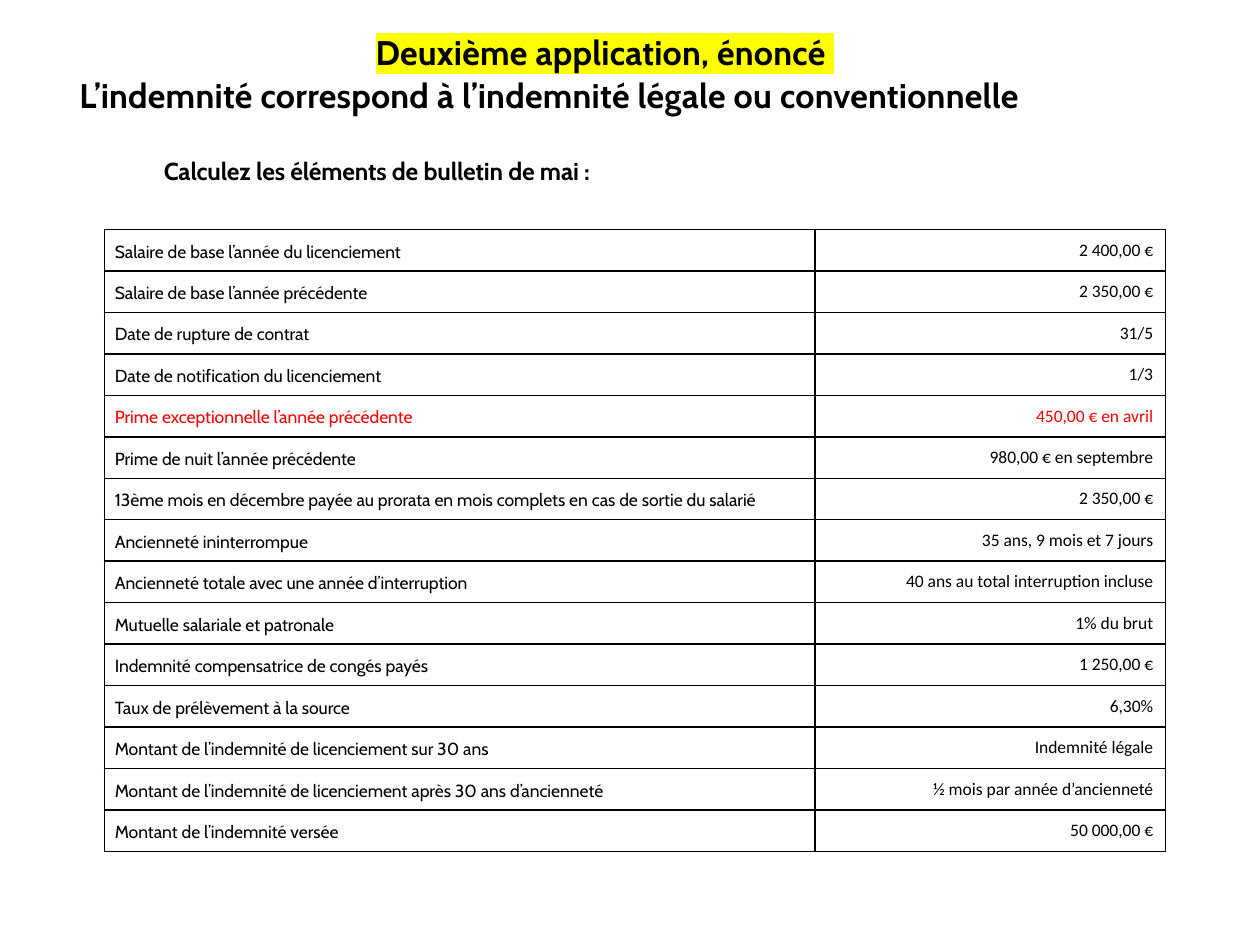
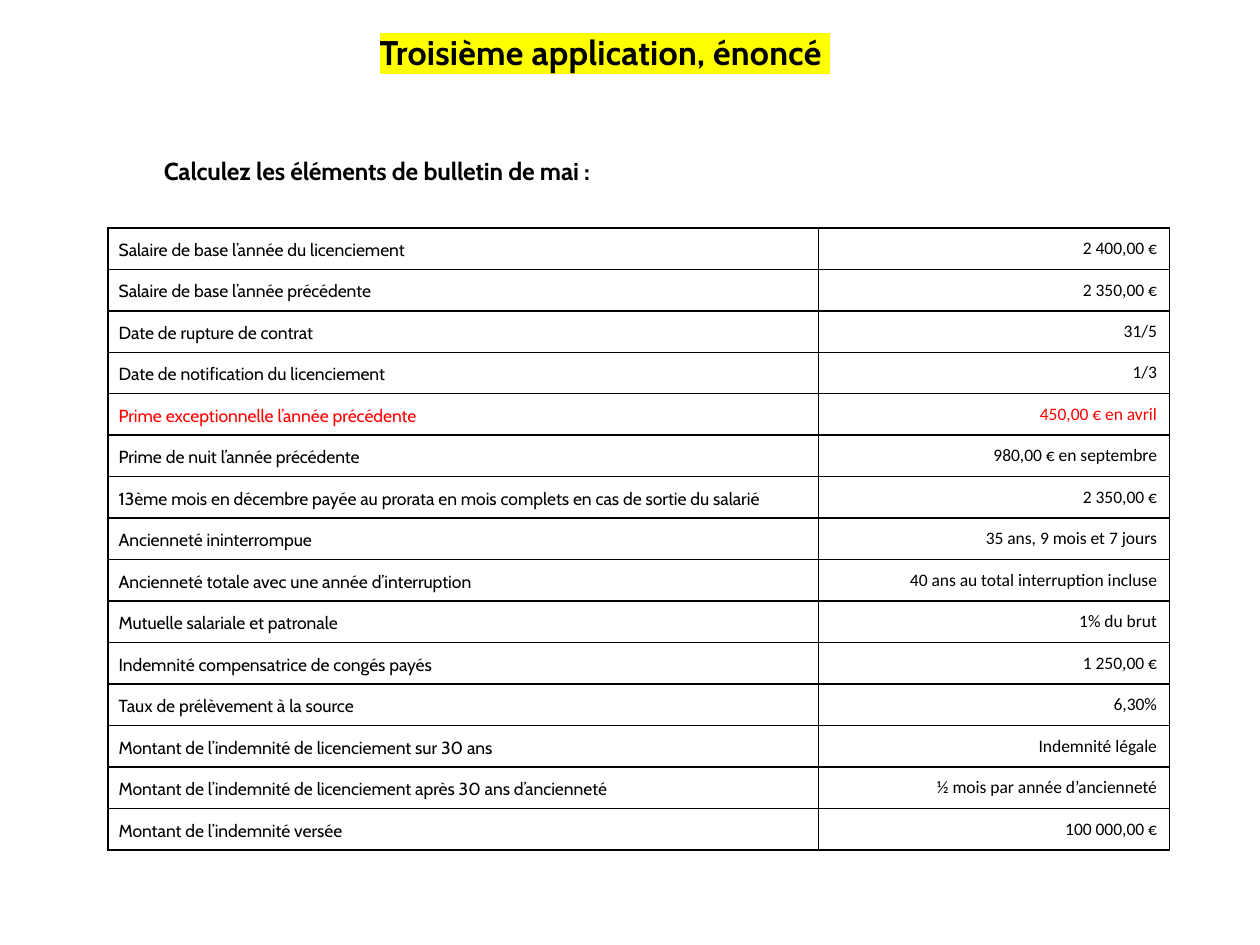
from dataclasses import dataclass

from lxml import etree
from pptx import Presentation
from pptx import util as u
from pptx.dml.color import RGBColor
from pptx.enum import text
from pptx.oxml.ns import qn


@dataclass(frozen=True)
class Theme:
    ink: str = "000000"
    alert: str = "FF0000"
    marker: str = "FFFF00"
    main_font: str = "Cabin"
    value_font: str = "Calibri"
    title_size: float = 19.5
    prompt_size: float = 14
    table_size: float = 10
    border: float = 1


theme = Theme()
Pt = u.Pt
align = text.PP_ALIGN

# Content shared by both statements
prompt = "Calculez les éléments de bulletin de mai :"
common_rows = [
    ("Salaire de base l’année du licenciement", "2 400,00 €"),
    ("Salaire de base l’année précédente", "2 350,00 €"),
    ("Date de rupture de contrat", "31/5"),
    ("Date de notification du licenciement", "1/3"),
    ("Prime exceptionnelle l’année précédente", "450,00 € en avril"),
    ("Prime de nuit l’année précédente", "980,00 € en septembre"),
    ("13ème mois en décembre payée au prorata en mois complets en cas de sortie du salarié",
     "2 350,00 €"),
    ("Ancienneté ininterrompue", "35 ans, 9 mois et 7 jours"),
    ("Ancienneté totale avec une année d’interruption",
     "40 ans au total interruption incluse"),
    ("Mutuelle salariale et patronale", "1% du brut"),
    ("Indemnité compensatrice de congés payés", "1 250,00 €"),
    ("Taux de prélèvement à la source", "6,30%"),
    ("Montant de l’indemnité de licenciement sur 30 ans", "Indemnité légale"),
    ("Montant de l’indemnité de licenciement après 30 ans d’ancienneté",
     "½ mois par année d’ancienneté"),
]
paid_label = "Montant de l’indemnité versée"
alert_row = 4
column_widths = (406, 200.5)
row_height = 23.7

# Title, subtitle, amount paid, table left and top
statements = [
    ("Deuxième application, énoncé ",
     "L’indemnité correspond à l’indemnité légale ou conventionnelle",
     "50 000,00 €", 59.6, 131.1),
    ("Troisième application, énoncé ", None, "100 000,00 €", 61.8, 130.2),
]


def write(para, words, size, alignment=align.LEFT, line=None, font=theme.main_font,
          color=theme.ink, bold=False, spacing=0, highlight=None):
    para.alignment = alignment
    if line:
        para.line_spacing = Pt(line)
    span = para.add_run()
    span.text = words
    span.font.size = Pt(size)
    span.font.bold = bold
    span.font.color.rgb = RGBColor.from_string(color)
    properties = span.font._element
    if spacing:
        properties.set("spc", str(spacing))
    if highlight:
        marker = etree.SubElement(properties, qn("a:highlight"))
        etree.SubElement(marker, qn("a:srgbClr"), val=highlight)
    span.font.name = font


def prepare(box, left, top, width, height):
    box.left, box.top, box.width, box.height = Pt(left), Pt(top), Pt(width), Pt(height)
    frame = box.text_frame
    frame.margin_left = frame.margin_right = frame.margin_top = frame.margin_bottom = 0
    frame.word_wrap = True
    frame.auto_size = text.MSO_AUTO_SIZE.NONE
    frame.vertical_anchor = text.MSO_ANCHOR.TOP
    return frame


deck = Presentation()
deck.slide_width, deck.slide_height = Pt(720), Pt(540)

for title, subtitle, paid, table_left, table_top in statements:
    page = deck.slides.add_slide(deck.slide_layouts[5])

    # Highlighted title with its optional second line
    frame = prepare(page.shapes.title, 45.4, 19.4, 600.5, 46.8 if subtitle else 25.2)
    write(frame.paragraphs[0], title, theme.title_size, align.CENTER, 22,
          bold=True, spacing=10, highlight=theme.marker)
    if subtitle:
        para = frame.add_paragraph()
        para.space_before = Pt(1.4)
        write(para, subtitle, theme.title_size, line=23, bold=True, spacing=10)

    # Instruction
    box = page.shapes.add_textbox(0, 0, 0, 0)
    frame = prepare(box, 93.6, 90, 506.9, 18)
    write(frame.paragraphs[0], prompt, theme.prompt_size, line=16, bold=True, spacing=-10)

    # Data table
    rows = common_rows + [(paid_label, paid)]
    table = page.shapes.add_table(
        len(rows), len(column_widths), Pt(table_left), Pt(table_top),
        Pt(sum(column_widths)), Pt(row_height * len(rows))).table
    table.first_row = table.horz_banding = False
    for column, width in zip(table.columns, column_widths):
        column.width = Pt(width)

    for index, (label, value) in enumerate(rows):
        table.rows[index].height = Pt(row_height)
        color = theme.alert if index == alert_row else theme.ink
        label_cell, value_cell = table.cell(index, 0), table.cell(index, 1)
        label_cell.margin_left = Pt(6)
        label_cell.margin_right = label_cell.margin_top = label_cell.margin_bottom = 0
        write(label_cell.text_frame.paragraphs[0], label, theme.table_size,
              line=14, color=color)
        write(value_cell.text_frame.paragraphs[0], value, theme.table_size,
              align.RIGHT, font=theme.value_font, color=color)

        for cell in (label_cell, value_cell):
            cell.vertical_anchor = text.MSO_ANCHOR.MIDDLE
            cell_properties = cell._tc.get_or_add_tcPr()
            for side in ("a:lnL", "a:lnR", "a:lnT", "a:lnB"):
                edge = etree.SubElement(cell_properties, qn(side), w=str(Pt(theme.border)))
                fill = etree.SubElement(edge, qn("a:solidFill"))
                etree.SubElement(fill, qn("a:srgbClr"), val=theme.ink)
            cell.fill.background()

deck.save("out.pptx")
